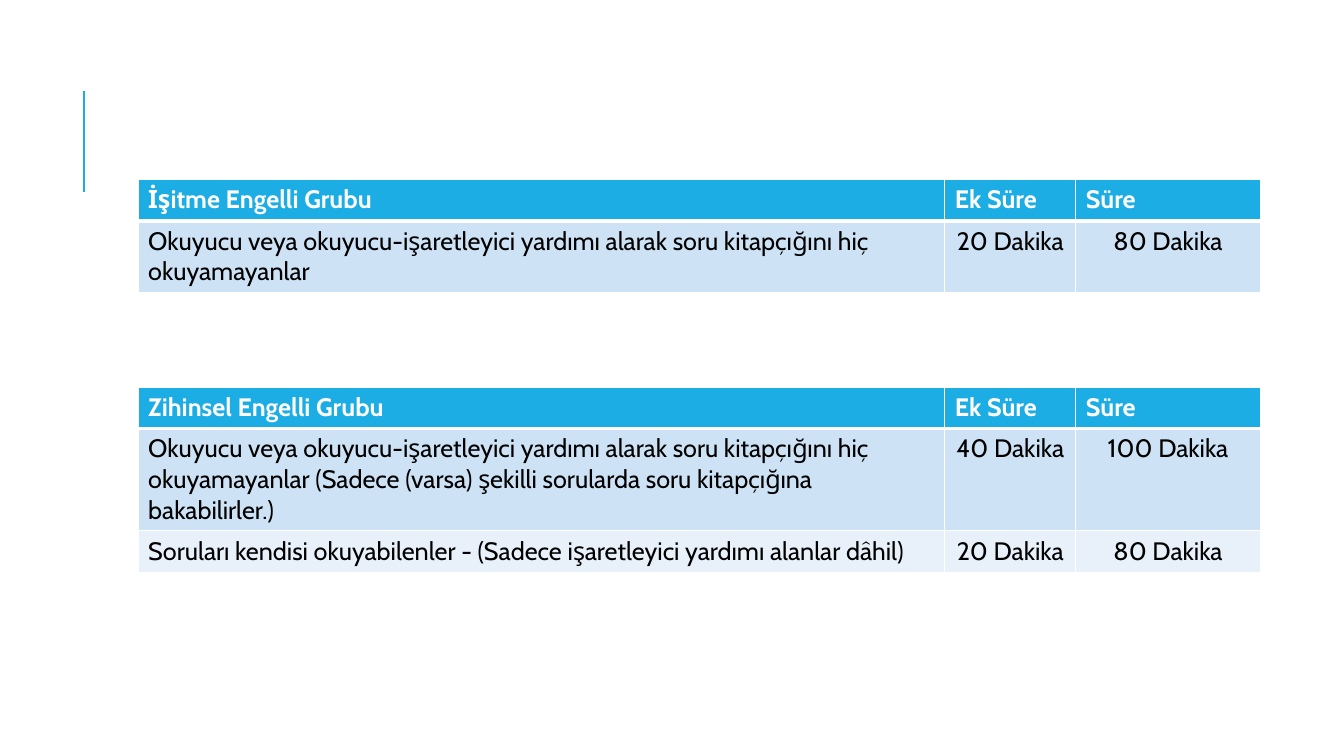
import pptx
import pptx.dml.color
import pptx.enum.shapes
import pptx.enum.text
import pptx.oxml.ns
import pptx.util
from lxml import etree

COLORS = {"accent": "1CADE4", "band": "CDE3F5", "light": "E8F1FA", "white": "FFFFFF", "black": "000000"}
SLIDE_WIDTH, SLIDE_HEIGHT = 13.33, 7.5
COLUMNS = (8, 1.3, 1.83)
ROW_HEIGHT = 0.41
TABLE_LEFT = 1.37
HEADER_RULE, THIN_RULE = 3, 1
GROUPS = (
    (1.78, (
        ("İşitme Engelli Grubu", "Ek Süre", "Süre"),
        ("Okuyucu veya okuyucu-işaretleyici yardımı alarak soru kitapçığını hiç okuyamayanlar",
         "20 Dakika", "80 Dakika"),
    )),
    (3.84, (
        ("Zihinsel Engelli Grubu", "Ek Süre", "Süre"),
        ("Okuyucu veya okuyucu-işaretleyici yardımı alarak soru kitapçığını hiç okuyamayanlar "
         "(Sadece (varsa) şekilli sorularda soru kitapçığına bakabilirler.)",
         "40 Dakika", "100 Dakika"),
        ("Soruları kendisi okuyabilenler - (Sadece işaretleyici yardımı alanlar dâhil)",
         "20 Dakika", "80 Dakika"),
    )),
)


def color(name):
    """Return the named colour as an RGB value."""
    return pptx.dml.color.RGBColor.from_string(COLORS[name])


def set_borders(cell, top, bottom):
    """Draw white borders around a cell, with the given top and bottom widths."""
    properties = cell._tc.get_or_add_tcPr()
    for side, width in {"L": THIN_RULE, "R": THIN_RULE, "T": top, "B": bottom}.items():
        line = etree.SubElement(properties, pptx.oxml.ns.qn("a:ln" + side), w=str(pptx.util.Pt(width)))
        fill = etree.SubElement(line, pptx.oxml.ns.qn("a:solidFill"))
        etree.SubElement(fill, pptx.oxml.ns.qn("a:srgbClr"), val=COLORS["white"])


def format_cell(cell, text, row, column):
    """Fill one cell according to its row and column."""
    header = row == 0
    set_borders(cell, HEADER_RULE if row == 1 else THIN_RULE, HEADER_RULE if header else THIN_RULE)
    cell.fill.solid()
    cell.fill.fore_color.rgb = color("accent" if header else "band" if row % 2 else "light")
    cell.text = text
    paragraph = cell.text_frame.paragraphs[0]
    if column and not header:
        paragraph.alignment = pptx.enum.text.PP_ALIGN.CENTER
    font = paragraph.runs[0].font
    for name, value in {"name": "Cabin", "size": pptx.util.Pt(18), "bold": header}.items():
        setattr(font, name, value)
    font.color.rgb = color("white" if header else "black")


def add_group_table(slide, left, top, rows):
    """Add the table of extra time for one group at the given corner."""
    box = [pptx.util.Inches(length) for length in (left, top, sum(COLUMNS), ROW_HEIGHT * len(rows))]
    table = slide.shapes.add_table(len(rows), len(COLUMNS), *box).table
    for column, width in zip(table.columns, COLUMNS):
        column.width = pptx.util.Inches(width)
    for row, texts in enumerate(rows):
        table.rows[row].height = pptx.util.Inches(ROW_HEIGHT)
        for column, text in enumerate(texts):
            format_cell(table.cell(row, column), text, row, column)


def add_accent_line(slide, left, top, height):
    """Add the vertical accent line, drawn upwards."""
    ends = [pptx.util.Inches(length) for length in (left, top + height, left, top)]
    line = slide.shapes.add_connector(pptx.enum.shapes.MSO_CONNECTOR.STRAIGHT, *ends)
    line.line.color.rgb = color("accent")
    line.line.width = pptx.util.Pt(1.5)
    etree.SubElement(line._element.spPr, pptx.oxml.ns.qn("a:effectLst"))


def main():
    """Build and save the slide."""
    presentation = pptx.Presentation()
    presentation.slide_width = pptx.util.Inches(SLIDE_WIDTH)
    presentation.slide_height = pptx.util.Inches(SLIDE_HEIGHT)
    slide = presentation.slides.add_slide(presentation.slide_layouts.get_by_name("Blank"))
    add_accent_line(slide, 0.83, 0.9, 1)
    for top, rows in GROUPS:
        add_group_table(slide, TABLE_LEFT, top, rows)
    presentation.save("out.pptx")


if __name__ == "__main__":
    main()
